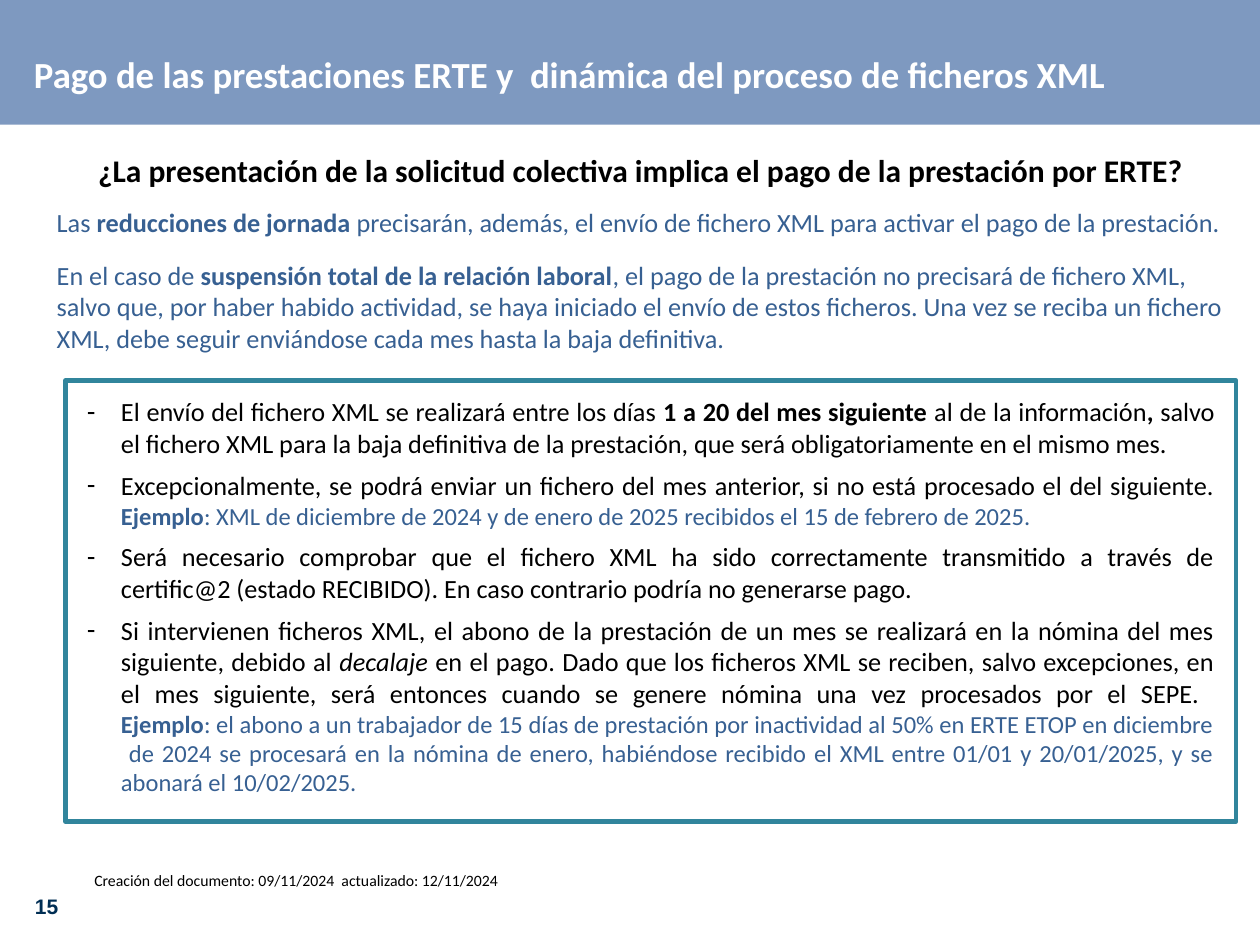
from lxml import etree
from pptx import Presentation
from pptx.dml.color import RGBColor
from pptx.enum.shapes import MSO_SHAPE
from pptx.enum.text import MSO_ANCHOR, MSO_AUTO_SIZE, PP_ALIGN
from pptx.oxml.ns import qn
from pptx.util import Inches, Pt

RECTANGLE = MSO_SHAPE.RECTANGLE
TOP, MIDDLE = MSO_ANCHOR.TOP, MSO_ANCHOR.MIDDLE
LEFT, CENTER, JUSTIFY = PP_ALIGN.LEFT, PP_ALIGN.CENTER, PP_ALIGN.JUSTIFY
NO_AUTOFIT = MSO_AUTO_SIZE.NONE

WHITE = RGBColor(0xFF, 0xFF, 0xFF)
BLACK = RGBColor(0, 0, 0)
BLUE = RGBColor(0x37, 0x60, 0x92)
NAVY = RGBColor(0x00, 0x2E, 0x54)
BAND_BLUE = RGBColor(0x7E, 0x99, 0xC0)
TEAL = RGBColor(0x31, 0x85, 0x9C)

STYLES = {
    "title": dict(size=Pt(21), color=WHITE, bold=True),
    "question": dict(size=Pt(18), color=BLACK, bold=True),
    "answer": dict(size=Pt(15), color=BLUE),
    "answer_key": dict(size=Pt(15), color=BLUE, bold=True),
    "rule": dict(size=Pt(15), color=BLACK),
    "rule_key": dict(size=Pt(15), color=BLACK, bold=True),
    "rule_term": dict(size=Pt(15), color=BLACK, italic=True),
    "example": dict(size=Pt(14), color=BLUE),
    "example_key": dict(size=Pt(14), color=BLUE, bold=True),
    "date": dict(size=Pt(9), color=BLACK),
    "number": dict(size=Pt(12), color=NAVY, bold=True, name="Arial"),
}

BREAK = ("", None)
TITLE = [("Pago de las prestaciones ERTE y  dinámica del proceso de ficheros XML", "title")]
QUESTION = [("¿La presentación de la solicitud colectiva implica el pago de la prestación por ERTE?",
             "question")]
REDUCTION = [
    ("Las ", "answer"),
    ("reducciones de jornada ", "answer_key"),
    ("precisarán, además, el envío de fichero XML para activar el pago de la prestación.", "answer"),
]
SUSPENSION = [
    ("En el caso de ", "answer"),
    ("suspensión total de la relación laboral", "answer_key"),
    (", el pago de la prestación no precisará de fichero XML, salvo que, por haber habido actividad, "
     "se haya iniciado el envío de estos ficheros. Una vez se reciba un fichero XML, debe seguir "
     "enviándose cada mes hasta la baja definitiva.", "answer"),
]
RULES = [
    [
        ("El envío del fichero XML se realizará entre los días ", "rule"),
        ("1 a 20 del mes siguiente ", "rule_key"),
        ("al de la información", "rule"),
        (", ", "rule_key"),
        ("salvo el fichero XML para la baja definitiva de la prestación, que será obligatoriamente "
         "en el mismo mes. ", "rule"),
    ],
    [
        ("Excepcionalmente, se podrá enviar un fichero del mes anterior, si no está procesado el "
         "del siguiente. ", "rule"),
        ("Ejemplo", "example_key"),
        (": XML de diciembre de 2024 y de enero de 2025 recibidos el 15 de febrero de 2025.", "example"),
    ],
    [
        ("Será necesario comprobar que el fichero XML ha sido correctamente transmitido a través de "
         "certific@2 (estado RECIBIDO). En caso contrario podría no generarse pago. ", "rule"),
    ],
    [
        ("Si intervienen ficheros XML, el abono de la prestación de un mes se realizará en la nómina "
         "del mes siguiente, debido al ", "rule"),
        ("decalaje", "rule_term"),
        (" en el pago. Dado que los ficheros XML se reciben, salvo excepciones, en el mes siguiente, "
         "será entonces cuando se genere nómina una vez procesados por el SEPE. ", "rule"),
        BREAK,
        ("Ejemplo", "example_key"),
        (": el abono a un trabajador de 15 días de prestación por inactividad al 50% en ERTE ETOP en "
         "diciembre  de 2024 se procesará en la nómina de enero, habiéndose recibido el XML entre "
         "01/01 y 20/01/2025, y se abonará el 10/02/2025.", "example"),
    ],
]
DATES = [("Creación del documento: 09/11/2024  actualizado: 12/11/2024", "date")]
NUMBER = [("15", "number")]


def place(shape, left, top, width, height):
    box = dict(left=left, top=top, width=width, height=height)
    for side, length in box.items():
        setattr(shape, side, Inches(length))


def write(shape, paragraphs, alignments, gaps, insets=(0.1, 0.05, 0.1, 0.05),
          anchor=TOP, dash=False, line_spacing=1.0):
    frame = shape.text_frame
    margins = zip(("margin_left", "margin_top", "margin_right", "margin_bottom"), map(Inches, insets))
    frame_format = dict(margins, word_wrap=True, auto_size=NO_AUTOFIT, vertical_anchor=anchor)
    for attribute, value in frame_format.items():
        setattr(frame, attribute, value)
    for index, (runs, alignment, gap) in enumerate(zip(paragraphs, alignments, gaps)):
        paragraph = frame.paragraphs[0] if index == 0 else frame.add_paragraph()
        if dash:
            properties = paragraph._p.get_or_add_pPr()
            properties.set("marL", str(Inches(0.27)))
            properties.set("indent", str(Inches(-0.27)))
            etree.SubElement(properties, qn("a:buChar")).set("char", "-")
        paragraph_format = dict(alignment=alignment, space_before=Pt(gap), space_after=Pt(0),
                                line_spacing=line_spacing)
        for attribute, value in paragraph_format.items():
            setattr(paragraph, attribute, value)
        for text, style in runs:
            if style is None:
                paragraph.add_line_break()
                continue
            run = paragraph.add_run()
            run.text = text
            font_format = dict(dict(name="Calibri", bold=False, italic=False), **STYLES[style])
            run.font.color.rgb = font_format.pop("color")
            for attribute, value in font_format.items():
                setattr(run.font, attribute, value)


def add_panel(slide, fill, *box):
    panel = slide.shapes.add_shape(RECTANGLE, *map(Inches, box))
    panel.shadow.inherit = False
    panel.fill.solid()
    panel.fill.fore_color.rgb = fill
    panel.line.fill.background()
    return panel


def main():
    """Build the slide on ERTE benefit payments and XML files."""
    deck = Presentation()
    deck.slide_width, deck.slide_height = Inches(10), Inches(7.5)
    slide = deck.slides.add_slide(deck.slide_layouts[1])
    title, rules = slide.placeholders

    band = add_panel(slide, BAND_BLUE, 0, 0, 10, 0.99)
    slide.shapes._spTree.insert(2, band._element)

    place(title, 0.16, 0.46, 9.8, 0.38)
    write(title, [TITLE], [LEFT], [0], insets=(0.11, 0.05, 0.11, 0.05), line_spacing=Pt(18))

    answer = slide.shapes.add_textbox(*map(Inches, (0.34, 1.15, 9.49, 1.73)))
    write(answer, [QUESTION, REDUCTION, SUSPENSION], [CENTER, LEFT, LEFT], [0, 10, 12],
          insets=(0.11, 0.05, 0.11, 0.05))

    place(rules, 0.52, 3.02, 9.29, 3.5)
    rules.line.color.rgb = TEAL
    rules.line.width = Pt(2.75)
    write(rules, RULES, [JUSTIFY] * len(RULES), [0] + [6] * (len(RULES) - 1),
          insets=(0.17, 0.12, 0.17, 0.09), dash=True)

    dates = slide.shapes.add_textbox(*map(Inches, (0.65, 6.86, 4.08, 0.25)))
    write(dates, [DATES], [LEFT], [0])

    number = add_panel(slide, WHITE, 0.07, 6.99, 0.6, 0.4)
    write(number, [NUMBER], [CENTER], [0], anchor=MIDDLE)

    deck.save("out.pptx")


if __name__ == "__main__":
    main()
